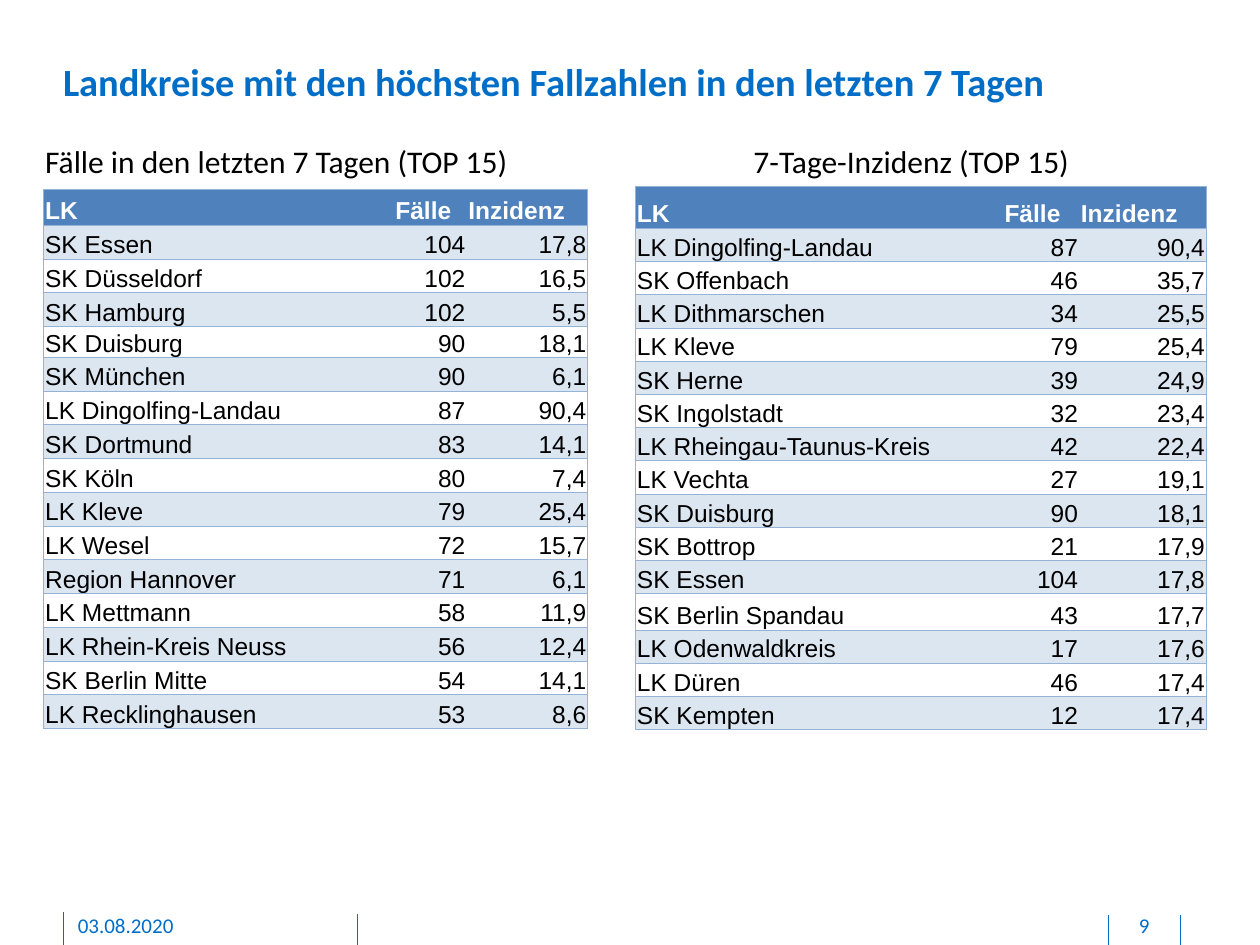
"""Build the slide listing the districts with the highest case counts."""
from dataclasses import dataclass

from lxml import etree
from pptx import Presentation
from pptx import util as u
from pptx.dml.color import RGBColor
from pptx.enum import shapes, text
from pptx.oxml.ns import qn

BLUE = RGBColor(0x00, 0x6E, 0xC7)
HEADER = RGBColor(0x4F, 0x81, 0xBD)
BAND = RGBColor(0xDC, 0xE6, 0xF1)
BORDER = RGBColor(0x95, 0xB3, 0xD7)
BLACK = RGBColor(0, 0, 0)
WHITE = RGBColor(255, 255, 255)
NO_STYLE = "{2D5ABB26-0587-4C30-8999-92F81FD0307C}"
HEADINGS = ("LK", "Fälle", "Inzidenz")


@dataclass
class Ranking:
    left: float
    top: float
    columns: tuple[float, ...]
    header_height: float
    row_height: float
    special_heights: dict[int, float]
    rows: list[tuple[str, str, str]]


@dataclass
class Label:
    content: str
    left: float
    top: float
    width: float
    height: float
    size: int
    color: RGBColor
    margins: tuple[float, float, float, float]
    wrap: bool = True
    align: text.PP_ALIGN = text.PP_ALIGN.LEFT


TOP_MARGINS = (0.25, 0.13, 0.25, 0.13)
FOOTER_MARGINS = (0, 0, 0, 0.13)

LABELS = [
    Label("03.08.2020", 1.57, 18.39, 5.16, 0.53, 12, BLUE, FOOTER_MARGINS),
    Label("9", 22.38, 18.39, 1.37, 0.53, 12, BLUE, FOOTER_MARGINS,
          align=text.PP_ALIGN.CENTER),
    Label("7-Tage-Inzidenz (TOP 15)", 14.94, 2.74, 6.96, 1.02, 18, BLACK,
          TOP_MARGINS, wrap=False),
    Label("Fälle in den letzten 7 Tagen (TOP 15)", 0.66, 2.74, 9.96, 1.02, 18,
          BLACK, TOP_MARGINS, wrap=False),
]

FOOTER_LINES = [(7.21, 18.42), (1.27, 18.39), (23.8, 18.44), (22.35, 18.44)]

RANKINGS = [
    Ranking(0.88, 3.82, (7.06, 1.47, 2.44), 0.72, 0.68, {4: 0.36}, [
        ("SK Essen", "104", "17,8"),
        ("SK Düsseldorf", "102", "16,5"),
        ("SK Hamburg", "102", "5,5"),
        ("SK Duisburg", "90", "18,1"),
        ("SK München", "90", "6,1"),
        ("LK Dingolfing-Landau", "87", "90,4"),
        ("SK Dortmund", "83", "14,1"),
        ("SK Köln", "80", "7,4"),
        ("LK Kleve", "79", "25,4"),
        ("LK Wesel", "72", "15,7"),
        ("Region Hannover", "71", "6,1"),
        ("LK Mettmann", "58", "11,9"),
        ("LK Rhein-Kreis Neuss", "56", "12,4"),
        ("SK Berlin Mitte", "54", "14,1"),
        ("LK Recklinghausen", "53", "8,6"),
    ]),
    Ranking(12.81, 3.76, (7.41, 1.54, 2.56), 0.84, 0.67, {12: 0.73}, [
        ("LK Dingolfing-Landau", "87", "90,4"),
        ("SK Offenbach", "46", "35,7"),
        ("LK Dithmarschen", "34", "25,5"),
        ("LK Kleve", "79", "25,4"),
        ("SK Herne", "39", "24,9"),
        ("SK Ingolstadt", "32", "23,4"),
        ("LK Rheingau-Taunus-Kreis", "42", "22,4"),
        ("LK Vechta", "27", "19,1"),
        ("SK Duisburg", "90", "18,1"),
        ("SK Bottrop", "21", "17,9"),
        ("SK Essen", "104", "17,8"),
        ("SK Berlin Spandau", "43", "17,7"),
        ("LK Odenwaldkreis", "17", "17,6"),
        ("LK Düren", "46", "17,4"),
        ("SK Kempten", "12", "17,4"),
    ]),
]


def set_font(p, name: str, size: int, color: RGBColor, bold: bool = False) -> None:
    p.font.name, p.font.size, p.font.bold = name, u.Pt(size), bold
    p.font.color.rgb = color


def set_margins(target, margins: tuple[float, ...]) -> None:
    for side, value in zip(("left", "top", "right", "bottom"), margins):
        setattr(target, f"margin_{side}", u.Cm(value))


def add_borders(cell, sides: str) -> None:
    tc_pr = cell._tc.get_or_add_tcPr()
    for index, side in enumerate(sides):
        ln = etree.Element(qn(f"a:ln{side}"), w=str(u.Pt(0.5)))
        fill = etree.SubElement(ln, qn("a:solidFill"))
        etree.SubElement(fill, qn("a:srgbClr"), val=str(BORDER))
        tc_pr.insert(index, ln)


def fill_cell(cell, content: str, row: int, column: int) -> None:
    header = row == 0
    cell.text = content
    cell.vertical_anchor = text.MSO_ANCHOR.BOTTOM
    set_margins(cell, (0.03, 0.03, 0.03, 0))
    p = cell.text_frame.paragraphs[0]
    set_font(p, "Arial", 14, WHITE if header else BLACK, header)
    if column and not header:
        p.alignment = text.PP_ALIGN.RIGHT
    if row % 2 or header:
        cell.fill.solid()
        cell.fill.fore_color.rgb = HEADER if header else BAND
    else:
        cell.fill.background()
    add_borders(cell, ("LTB", "TB", "RTB")[column])


def add_ranking(s, ranking: Ranking) -> None:
    rows = [HEADINGS, *ranking.rows]
    heights = [ranking.special_heights.get(i, ranking.row_height)
               for i in range(len(rows))]
    heights[0] = ranking.header_height
    frame = s.shapes.add_table(
        len(rows), len(HEADINGS), u.Cm(ranking.left), u.Cm(ranking.top),
        u.Cm(sum(ranking.columns)), u.Cm(sum(heights)))
    table = frame.table
    table.horz_banding = False
    table._tbl.tblPr[0].text = NO_STYLE
    for column, width in zip(table.columns, ranking.columns):
        column.width = u.Cm(width)
    for i, (values, height) in enumerate(zip(rows, heights)):
        table.rows[i].height = u.Cm(height)
        for j, value in enumerate(values):
            fill_cell(table.cell(i, j), value, i, j)


def add_label(s, label: Label) -> None:
    box = s.shapes.add_textbox(u.Cm(label.left), u.Cm(label.top),
                               u.Cm(label.width), u.Cm(label.height))
    tf = box.text_frame
    tf.word_wrap = label.wrap
    set_margins(tf, label.margins)
    p = tf.paragraphs[0]
    p.text, p.alignment = label.content, label.align
    set_font(p, "Calibri", label.size, label.color)


def add_footer_line(s, x: float, top: float) -> None:
    line = s.shapes.add_connector(shapes.MSO_CONNECTOR.STRAIGHT,
                                  u.Cm(x), u.Cm(top), u.Cm(x), u.Cm(19.05))
    line.line.color.rgb, line.line.width = BLUE, u.Pt(0.5)
    etree.SubElement(line._element.spPr, qn("a:effectLst"))


def set_title(s, content: str) -> None:
    sp = s.shapes.title
    sp.left, sp.top, sp.width, sp.height = map(u.Cm, (1.27, 1.17, 22.48, 0.94))
    tf = sp.text_frame
    tf.auto_size = text.MSO_AUTO_SIZE.SHAPE_TO_FIT_TEXT
    set_margins(tf, (0, 0, 0, 0))
    p = tf.paragraphs[0]
    p.text, p.alignment = content, text.PP_ALIGN.LEFT
    set_font(p, "Calibri", 22, BLUE, True)


def main() -> None:
    prs = Presentation()
    prs.slide_width, prs.slide_height = u.Cm(25.4), u.Cm(19.05)
    s = prs.slides.add_slide(prs.slide_layouts[5])
    set_title(s, "Landkreise mit den höchsten Fallzahlen in den letzten 7 Tagen")
    for x, top in FOOTER_LINES:
        add_footer_line(s, x, top)
    for ranking in RANKINGS:
        add_ranking(s, ranking)
    for label in LABELS:
        add_label(s, label)
    prs.save("out.pptx")


if __name__ == "__main__":
    main()
